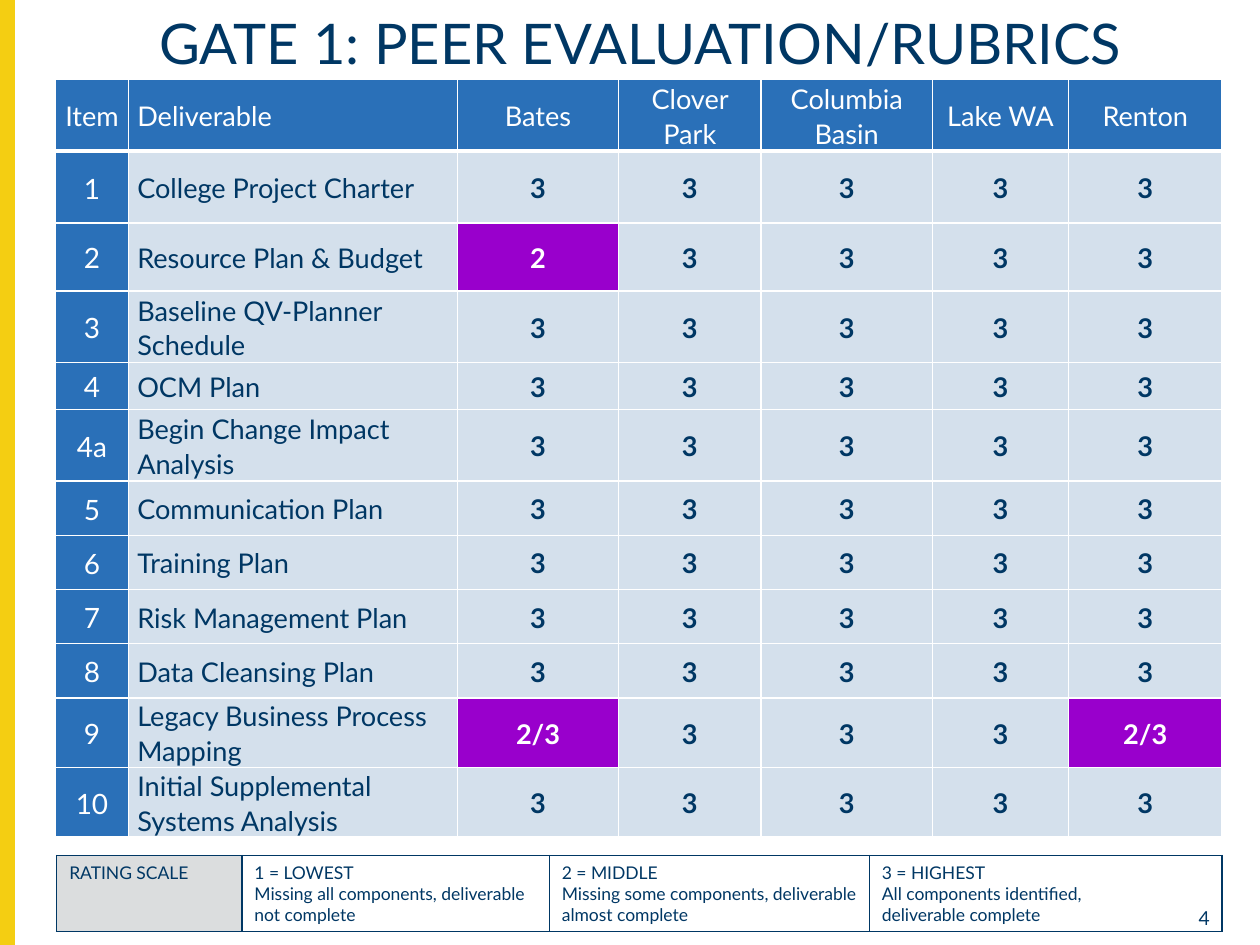
from lxml import etree
from pptx import Presentation
from pptx.dml.color import RGBColor
from pptx.enum.shapes import MSO_SHAPE
from pptx.enum.text import MSO_ANCHOR, MSO_AUTO_SIZE, PP_ALIGN
from pptx.oxml.ns import qn
from pptx.util import Inches, Pt

LEFT, CENTER, RIGHT = PP_ALIGN.LEFT, PP_ALIGN.CENTER, PP_ALIGN.RIGHT
TOP, MIDDLE = MSO_ANCHOR.TOP, MSO_ANCHOR.MIDDLE
NO_AUTOFIT = MSO_AUTO_SIZE.NONE
RECTANGLE = MSO_SHAPE.RECTANGLE
TITLE_ONLY = 5

FONT = "Lato"
NAVY, WHITE, YELLOW = "003764", "FFFFFF", "F4CE12"
BLUE, PALE_BLUE, PURPLE, GREY = "2A70B8", "D4E0EC", "9900CC", "DBDDDE"

HEADINGS = ["Item", "Deliverable", "Bates", "Clover Park", "Columbia Basin",
            "Lake WA", "Renton"]
COLLEGES = HEADINGS[2:]
TOP_SCORE = "3"
# Item, deliverable, row height
DELIVERABLES = [
    ("1", "College Project Charter", 0.57),
    ("2", "Resource Plan & Budget", 0.54),
    ("3", "Baseline QV-Planner Schedule", 0.57),
    ("4", "OCM Plan", 0.37),
    ("4a", "Begin Change Impact Analysis", 0.57),
    ("5", "Communication Plan", 0.43),
    ("6", "Training Plan", 0.43),
    ("7", "Risk Management Plan", 0.43),
    ("8", "Data Cleansing Plan", 0.43),
    ("9", "Legacy Business Process Mapping", 0.54),
    ("10", "Initial Supplemental Systems Analysis", 0.54),
]
LOWER_SCORES = {("2", "Bates"): "2", ("9", "Bates"): "2/3", ("9", "Renton"): "2/3"}
HEADER_HEIGHT = 0.57
SCORE_WIDTHS = [0.58, 2.61, 1.28, 1.13, 1.36, 1.08, 1.22]

RATINGS = [
    "RATING SCALE",
    "1 = LOWEST\nMissing all components, deliverable not complete",
    "2 = MIDDLE\nMissing some components, deliverable almost complete",
    "3 = HIGHEST\nAll components identified,\ndeliverable complete",
]
RATING_WIDTHS = [1.47, 2.44, 2.54, 2.8]


def rgb(hex_color):
    return RGBColor.from_string(hex_color)


def write_text(frame, text, size, color, align=LEFT, bold=False, spacing=None):
    frame.text = text
    for paragraph in frame.paragraphs:
        paragraph.alignment = align
        if spacing:
            paragraph.line_spacing = spacing
        for run in paragraph.runs:
            run.font.name = FONT
            run.font.size = Pt(size)
            run.font.bold = bold
            run.font.color.rgb = rgb(color)


def set_borders(cell, color, top=1, bottom=1):
    """Draw all four cell borders; must run before the cell's fill is set."""
    properties = cell._tc.get_or_add_tcPr()
    for side, width in (("L", 1), ("R", 1), ("T", top), ("B", bottom)):
        line = etree.SubElement(properties, qn(f"a:ln{side}"), w=str(Pt(width)))
        fill = etree.SubElement(line, qn("a:solidFill"))
        etree.SubElement(fill, qn("a:srgbClr"), val=color)


def fill_cell(cell, color):
    cell.fill.solid()
    cell.fill.fore_color.rgb = rgb(color)


def add_plain_table(slide, left, top, widths, heights):
    table = slide.shapes.add_table(
        len(heights), len(widths), Inches(left), Inches(top),
        Inches(sum(widths)), Inches(sum(heights))).table
    table.first_row = table.horz_banding = False
    for column, width in zip(table.columns, widths):
        column.width = Inches(width)
    for row, height in zip(table.rows, heights):
        row.height = Inches(height)
    return table


def add_side_bar(slide):
    bar = slide.shapes.add_shape(RECTANGLE, 0, 0, Inches(0.11), Inches(7.5))
    bar.shadow.inherit = False
    bar.fill.solid()
    bar.fill.fore_color.rgb = rgb(YELLOW)
    bar.line.color.rgb = rgb(YELLOW)
    bar.line.width = Pt(1)


def set_title(slide, text):
    title = slide.shapes.title
    title.left, title.top = Inches(0.26), Inches(0.08)
    title.width, title.height = Inches(9.65), Inches(0.7)
    frame = title.text_frame
    frame.auto_size = NO_AUTOFIT
    frame.vertical_anchor = TOP
    write_text(frame, text, 32, NAVY, CENTER, spacing=0.9)


def add_page_number(slide, number):
    box = slide.shapes.add_textbox(Inches(9.2), Inches(7.14), Inches(0.5), Inches(0.21))
    box.text_frame.word_wrap = True
    write_text(box.text_frame, number, 11, NAVY, RIGHT)


def score_style(row, column, text):
    """Return fill, text colour, size and boldness for a score table cell."""
    if row == 0:
        return BLUE, WHITE, 15.5, False
    if column == 0:
        return BLUE, WHITE, 16, False
    if column == 1:
        return PALE_BLUE, NAVY, 15.5, False
    if text != TOP_SCORE:
        return PURPLE, WHITE, 15.5, True
    return PALE_BLUE, NAVY, 15.5, True


def add_score_table(slide):
    rows = [HEADINGS]
    for item, deliverable, _ in DELIVERABLES:
        scores = [LOWER_SCORES.get((item, college), TOP_SCORE) for college in COLLEGES]
        rows.append([item, deliverable] + scores)
    heights = [HEADER_HEIGHT] + [height for _, _, height in DELIVERABLES]
    table = add_plain_table(slide, 0.44, 0.63, SCORE_WIDTHS, heights)
    for r, texts in enumerate(rows):
        for c, text in enumerate(texts):
            cell = table.cell(r, c)
            fill, color, size, bold = score_style(r, c, text)
            set_borders(cell, WHITE, top=3 if r == 1 else 1, bottom=3 if r == 0 else 1)
            fill_cell(cell, fill)
            cell.margin_left = cell.margin_right = Inches(0.07)
            cell.margin_top = cell.margin_bottom = 0
            cell.vertical_anchor = MIDDLE
            write_text(cell.text_frame, text, size, color,
                       LEFT if c == 1 else CENTER, bold, 1.07)


def add_rating_table(slide):
    table = add_plain_table(slide, 0.45, 6.79, RATING_WIDTHS, [0.6])
    for c, text in enumerate(RATINGS):
        cell = table.cell(0, c)
        set_borders(cell, NAVY)
        if c == 0:
            fill_cell(cell, GREY)
        else:
            cell.fill.background()
        write_text(cell.text_frame, text, 10, NAVY)


def main():
    presentation = Presentation()
    presentation.slide_width, presentation.slide_height = Inches(10), Inches(7.5)
    slide = presentation.slides.add_slide(presentation.slide_layouts[TITLE_ONLY])
    add_side_bar(slide)
    add_page_number(slide, "4")
    set_title(slide, "GATE 1: PEER EVALUATION/RUBRICS")
    add_score_table(slide)
    add_rating_table(slide)
    presentation.save("out.pptx")


if __name__ == "__main__":
    main()
